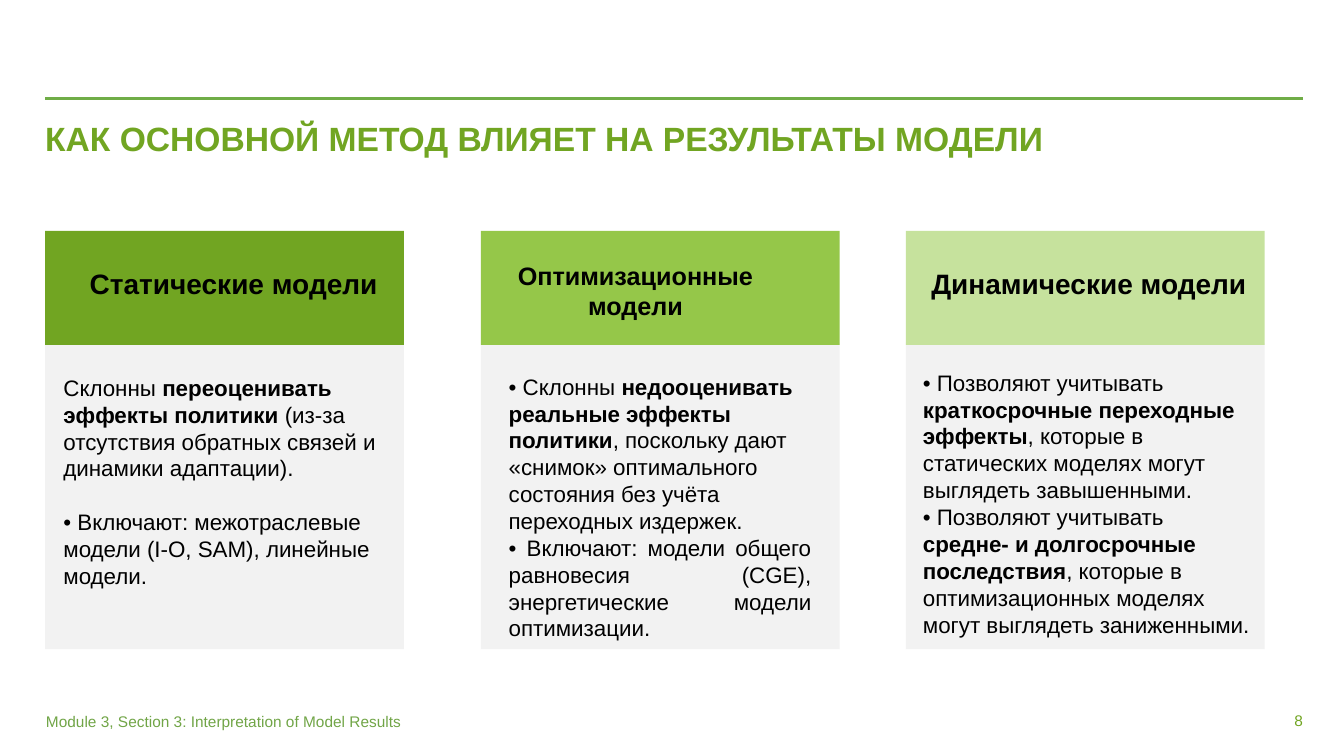
from dataclasses import dataclass

from lxml import etree
from pptx import Presentation
from pptx.dml.color import RGBColor
from pptx.enum.shapes import MSO_CONNECTOR, MSO_SHAPE
from pptx.enum.text import MSO_ANCHOR, MSO_AUTO_SIZE, PP_ALIGN
from pptx.oxml.ns import qn
from pptx.slide import Slide
from pptx.text.text import TextFrame
from pptx.util import Cm, Pt

LINE, RECT = MSO_CONNECTOR.STRAIGHT, MSO_SHAPE.RECTANGLE
LEFT, MID, RIGHT, JUST = PP_ALIGN.LEFT, PP_ALIGN.CENTER, PP_ALIGN.RIGHT, PP_ALIGN.JUSTIFY
TOP, CENTRE = MSO_ANCHOR.TOP, MSO_ANCHOR.MIDDLE
GROW, FIXED = MSO_AUTO_SIZE.SHAPE_TO_FIT_TEXT, MSO_AUTO_SIZE.NONE
TITLE_ONLY = 5

Box = tuple[float, float, float, float]


@dataclass(frozen=True)
class Theme:
    font: str = "Arial"
    ink: str = "000000"
    panel: str = "F2F2F2"
    green: str = "71A522"
    lime: str = "95C749"
    pale: str = "C6E29D"
    rule: str = "70AD47"
    foot: str = "71A547"
    title: float = 24
    head: float = 20
    tight: float = 18
    body: float = 16
    small: float = 11


@dataclass(frozen=True)
class Para:
    """One paragraph; text between asterisks is bold."""
    text: str
    align: PP_ALIGN = LEFT
    before: float = 0


@dataclass(frozen=True)
class Card:
    left: float
    fill: str
    head: list[Para]
    head_box: Box
    head_size: float
    body: list[Para]
    body_box: Box


THEME = Theme()
WIDTH, HEAD_TOP, HEAD_HIGH, BODY_TOP, BODY_HIGH = 9.04, 5.82, 2.87, 8.64, 7.72
EDGE, SPAN = 1.14, 31.7

CARDS = [
    Card(EDGE, THEME.green,
         [Para("*Статические модели*")], (2.01, 6.6, 7.82, 1.12), THEME.head,
         [Para("Склонны *переоценивать эффекты политики *(из-за отсутствия "
               "обратных связей и динамики адаптации)."),
          Para("• Включают: межотраслевые модели (I-O, SAM), линейные модели.",
               before=19)],
         (1.35, 9.3, 8.43, 5.74)),
    Card(12.12, THEME.lime,
         [Para("*Оптимизационные*"), Para("*модели*", MID)],
         (12.8, 6.43, 6.71, 1.8), THEME.tight,
         [Para("• Склонны *недооценивать реальные эффекты политики*, поскольку "
               "дают «снимок» оптимального состояния без учёта переходных издержек."),
          Para("• Включают: модели общего равновесия (CGE), энергетические "
               "модели оптимизации.", JUST)],
         (12.57, 9.27, 8.13, 7.09)),
    Card(22.83, THEME.pale,
         [Para("*Динамические модели*")], (23.22, 6.6, 8.51, 1.12), THEME.head,
         [Para("• Позволяют учитывать *краткосрочные переходные эффекты*, которые "
               "в статических моделях могут выглядеть завышенными."),
          Para("• Позволяют учитывать *средне- и долгосрочные последствия*, которые "
               "в оптимизационных моделях могут выглядеть заниженными.")],
         (23.01, 9.17, 8.89, 7.09)),
]


def write(frame: TextFrame, paras: list[Para], size: float, color: str) -> None:
    for i, item in enumerate(paras):
        para = frame.paragraphs[0] if i == 0 else frame.add_paragraph()
        para.alignment = item.align
        if item.before:
            para.space_before = Pt(item.before)
        para.font.name, para.font.size = THEME.font, Pt(size)
        para.font.color.rgb = RGBColor.from_string(color)
        for j, part in enumerate(item.text.split("*")):
            if part:
                run = para.add_run()
                run.text = part
                run.font.bold = j % 2 == 1


def add_text(slide: Slide, box: Box, paras: list[Para], size: float,
             color: str = THEME.ink, wrap: bool = True,
             fit: MSO_AUTO_SIZE = GROW) -> TextFrame:
    frame = slide.shapes.add_textbox(*map(Cm, box)).text_frame
    frame.word_wrap, frame.auto_size = wrap, fit
    write(frame, paras, size, color)
    return frame


def add_rect(slide: Slide, box: Box, fill: str) -> None:
    rect = slide.shapes.add_shape(RECT, *map(Cm, box))
    rect.shadow.inherit = False
    rect.fill.solid()
    rect.fill.fore_color.rgb = RGBColor.from_string(fill)
    rect.line.fill.background()


def add_rule(slide: Slide, top: float) -> None:
    rule = slide.shapes.add_connector(LINE, Cm(EDGE), Cm(top), Cm(EDGE + SPAN), Cm(top))
    rule.line.color.rgb = RGBColor.from_string(THEME.rule)
    rule.line.width = Pt(2)
    etree.SubElement(rule._element.spPr, qn("a:effectLst"))


def set_title(slide: Slide, text: str) -> None:
    title = slide.shapes.title
    title.left, title.top, title.width, title.height = map(Cm, (EDGE, 2.95, SPAN, 1.3))
    frame = title.text_frame
    frame.margin_left = frame.margin_right = 0
    frame.vertical_anchor, frame.auto_size = TOP, FIXED
    frame.word_wrap = True
    write(frame, [Para(f"*{text}*")], THEME.title, THEME.green)
    frame.paragraphs[0].line_spacing = 0.9


def main() -> None:
    deck = Presentation()
    deck.slide_width, deck.slide_height = Cm(33.87), Cm(19.05)
    slide = deck.slides.add_slide(deck.slide_layouts[TITLE_ONLY])

    add_rule(slide, 2.49)
    set_title(slide, "КАК ОСНОВНОЙ МЕТОД ВЛИЯЕТ НА РЕЗУЛЬТАТЫ МОДЕЛИ")
    for card in CARDS:
        add_rect(slide, (card.left, BODY_TOP, WIDTH, BODY_HIGH), THEME.panel)
        add_rect(slide, (card.left, HEAD_TOP, WIDTH, HEAD_HIGH), card.fill)
        add_text(slide, card.head_box, card.head, card.head_size, wrap=False)
        add_text(slide, card.body_box, card.body, THEME.body)

    add_text(slide, (0.91, 17.81, 10.19, 1.02),
             [Para("Module 3, Section 3: Interpretation of Model Results")],
             THEME.small, THEME.foot, fit=FIXED)
    page = add_text(slide, (30.02, 17.65, 2.82, 1.02), [Para("8", RIGHT)],
                    THEME.small, THEME.green, fit=FIXED)
    page.margin_right, page.vertical_anchor = 0, CENTRE
    deck.save("out.pptx")


if __name__ == "__main__":
    main()
